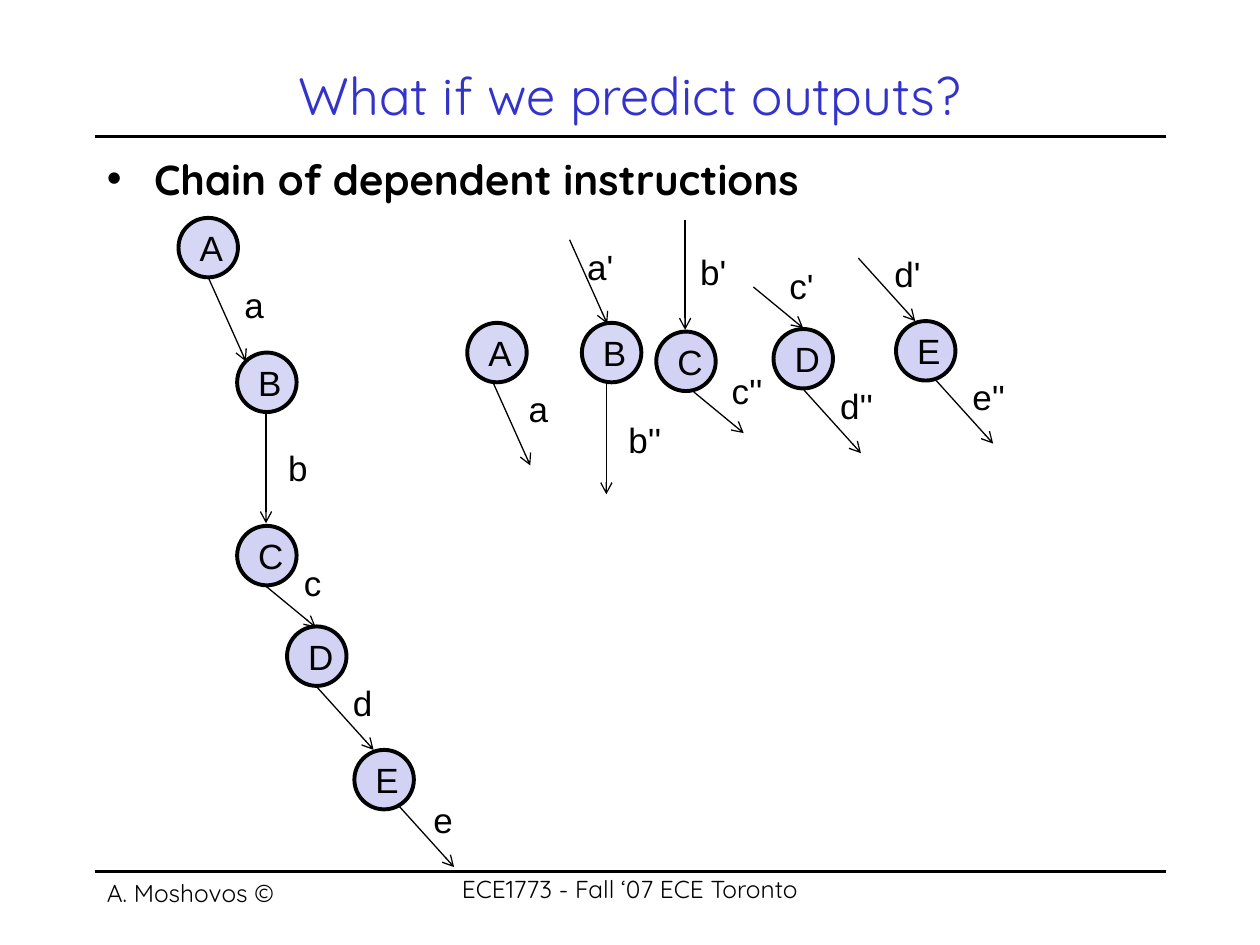
"""Build a slide comparing a dependent instruction chain with predicted outputs."""
from lxml import etree
from pptx import Presentation
from pptx.dml.color import RGBColor
from pptx.enum.shapes import MSO_CONNECTOR, MSO_SHAPE
from pptx.enum.text import MSO_ANCHOR, MSO_AUTO_SIZE, PP_ALIGN
from pptx.oxml.ns import qn
from pptx.util import Pt

STRAIGHT = MSO_CONNECTOR.STRAIGHT
OVAL = MSO_SHAPE.OVAL
LEFT, CENTER = PP_ALIGN.LEFT, PP_ALIGN.CENTER
MIDDLE = MSO_ANCHOR.MIDDLE
GROW = MSO_AUTO_SIZE.SHAPE_TO_FIT_TEXT
COLORS = {"black": "000000", "title": "3333CC", "early": "D6D6F5", "late": "D2D2F4"}

deck = Presentation()
deck.slide_width, deck.slide_height = Pt(720), Pt(540)
page = deck.slides.add_slide(deck.slide_layouts[6])


def write(shape, text, size, font="Quicksand", color="black", align=LEFT):
    shape.text_frame.word_wrap = True
    para = shape.text_frame.paragraphs[0]
    para.text = text
    para.alignment = align
    para.font.name = font
    para.font.size = Pt(size)
    para.font.color.rgb = RGBColor.from_string(COLORS[color])
    return para


def draw_line(x, y, dx, dy, width):
    line = page.shapes.add_connector(STRAIGHT, Pt(x), Pt(y), Pt(x + dx), Pt(y + dy))
    line.line.color.rgb = RGBColor.from_string(COLORS["black"])
    line.line.width = Pt(width)
    etree.SubElement(line._element.spPr, qn("a:effectLst"))
    return line


for rule_y in (78, 498):
    draw_line(54, rule_y, 612, 0, 2.25)

title = page.shapes.add_textbox(Pt(54), Pt(30), Pt(612), Pt(48))
title.text_frame.vertical_anchor = MIDDLE
write(title, "What if we predict outputs?", 30, color="title", align=CENTER)

body = page.shapes.add_textbox(Pt(54), Pt(84), Pt(612), Pt(408))
para = write(body, "Chain of dependent instructions", 24)
para.font.bold = True
properties = para._p.get_or_add_pPr()
properties.set("marL", str(Pt(27)))
properties.set("indent", str(Pt(-27)))
bullet_font = etree.Element(qn("a:buFont"), typeface="Arial")
bullet = etree.Element(qn("a:buChar"), char="•")
properties.insert(0, bullet_font)
bullet_font.addnext(bullet)

author = page.shapes.add_textbox(Pt(54), Pt(498), Pt(150), Pt(30))
write(author, "A. Moshovos ©", 14)
course = page.shapes.add_textbox(Pt(234), Pt(496), Pt(252), Pt(30))
write(course, "ECE1773 - Fall ‘07 ECE Toronto", 14, align=CENTER)

chain_nodes = [("A", 102, 124.5), ("B", 135.5, 201.5), ("C", 135.5, 300.5),
               ("D", 164, 358), ("E", 202.5, 428.5)]
predicted_nodes = [("A", 267, 184.5), ("B", 332.5, 184.5), ("C", 375, 189.5),
                   ("D", 442, 188), ("E", 512, 183.5)]
for name, x, y in chain_nodes + predicted_nodes:
    node = page.shapes.add_shape(OVAL, Pt(x), Pt(y), Pt(34), Pt(34))
    node.shadow.inherit = False
    node.fill.solid()
    fill = COLORS["early" if name in "AB" else "late"]
    node.fill.fore_color.rgb = RGBColor.from_string(fill)
    node.line.color.rgb = RGBColor.from_string(COLORS["black"])
    node.line.width = Pt(2.25)
    node.text_frame.vertical_anchor = MIDDLE
    write(node, name, 20, font="Arial", align=CENTER)

directions = {"a": (21.5, 48), "b": (0, 63), "c": (28.5, 23.5),
              "d": (32.5, 36), "e": (32.5, 36)}
chain_values = [("a", 119, 158.5, 132.5, 158.5), ("b", 152, 236, 157.5, 251.5),
                ("c", 152, 335, 166.5, 317.5), ("d", 181, 392.5, 194.5, 386),
                ("e", 227, 459.5, 240.5, 453)]
predicted_inputs = [("a'", 325.5, 137, 328.5, 137), ("b'", 391.5, 125.5, 393, 139.5),
                    ("c'", 430.5, 164, 444, 147.5), ("d'", 490.5, 147.5, 504, 141)]
actual_outputs = [("a", 281.5, 218, 295, 218), ("b''", 346.5, 219.5, 352, 235.5),
                  ("c''", 396.5, 224, 411, 207.5), ("d''", 459.5, 223, 473, 216),
                  ("e''", 535, 217.5, 548.5, 211)]
for value, x, y, label_x, label_y in chain_values + predicted_inputs + actual_outputs:
    arrow = draw_line(x, y, *directions[value[0]], 0.75)
    etree.SubElement(arrow.line._get_or_add_ln(), qn("a:tailEnd"), type="arrow")
    label_width = 22 + 4 * len(value)
    label = page.shapes.add_textbox(Pt(label_x), Pt(label_y), Pt(label_width), Pt(31.5))
    write(label, value, 20, font="Arial")
    label.text_frame.word_wrap = False
    label.text_frame.auto_size = GROW

deck.save("out.pptx")
